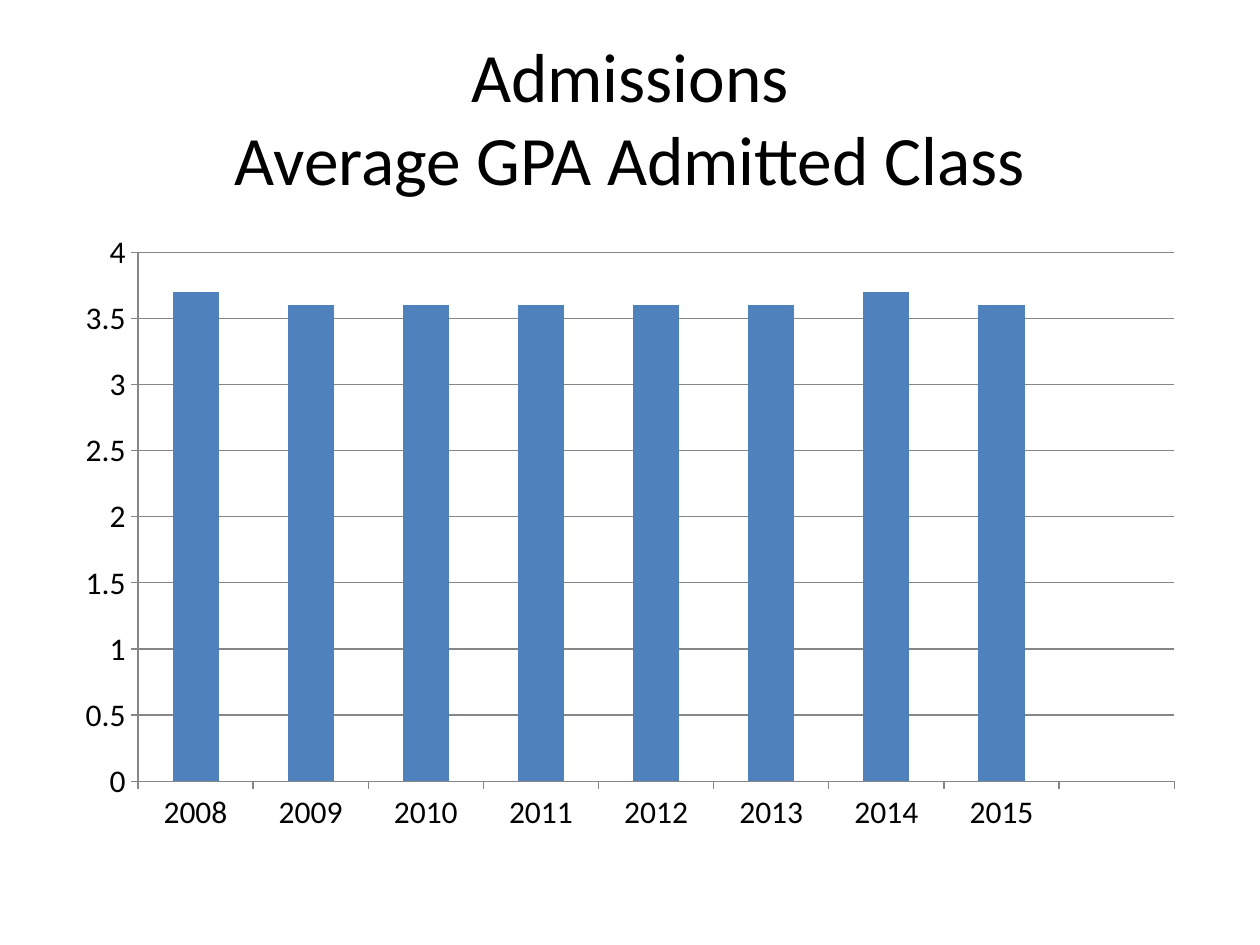
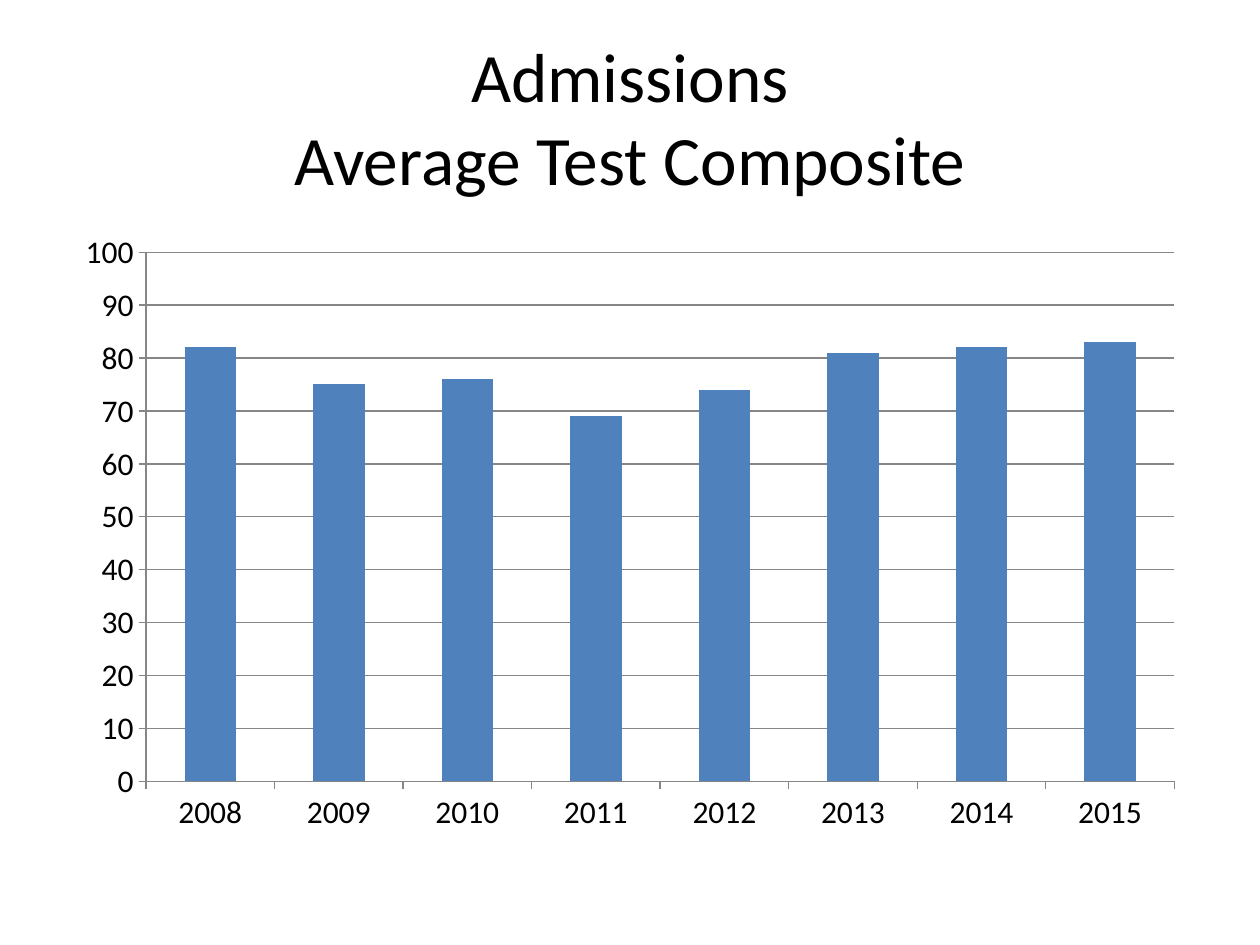
from dataclasses import dataclass

from pptx import Presentation
from pptx import util as u
from pptx.chart import data as cd
from pptx.dml.color import RGBColor
from pptx.enum import chart as ce, text as te


@dataclass(frozen=True)
class Theme:
    font: str = "Calibri"
    ink: str = "000000"
    bar: str = "4F81BD"
    rule: str = "868686"
    paper: str = "FFFFFF"
    head: float = 39.6
    label: float = 18


THEME = Theme()
# Boxes: left, top, width, height in cm
HEAD = (1.27, 0.76, 22.86, 3.18)
PLOT = (1.27, 4.45, 22.86, 12.57)
YEARS = [str(year) for year in range(2008, 2016)]


def rgb(code):
    return RGBColor.from_string(code)


def place(box):
    return [u.Cm(side) for side in box]


def style(font, size, color):
    font.name = THEME.font
    font.size = u.Pt(size)
    font.color.rgb = rgb(color)


def write(slide, words, box, *, size, color=THEME.ink, align=te.PP_ALIGN.CENTER):
    frame = slide.shapes.add_textbox(*place(box)).text_frame
    frame.word_wrap = True
    frame.vertical_anchor = te.MSO_ANCHOR.MIDDLE
    para = frame.paragraphs[0]
    para.text = words
    para.alignment = align
    for run in para.runs:
        style(run.font, size, color)


def rule(line):
    line.color.rgb = rgb(THEME.rule)
    line.width = u.Pt(0.75)


def columns(slide, box, names, values, top, step):
    data = cd.CategoryChartData()
    data.categories = names
    data.add_series("Series 1", values)
    kind = ce.XL_CHART_TYPE.COLUMN_CLUSTERED
    chart = slide.shapes.add_chart(kind, *place(box), data).chart
    chart.has_legend = chart.has_title = False
    style(chart.font, THEME.label, THEME.ink)

    # Bars
    plot = chart.plots[0]
    plot.gap_width = 150
    plot.vary_by_categories = False
    fill = plot.series[0].format.fill
    fill.solid()
    fill.fore_color.rgb = rgb(THEME.bar)

    # Axes and grid
    for axis in (chart.category_axis, chart.value_axis):
        axis.major_tick_mark = ce.XL_TICK_MARK.OUTSIDE
        axis.minor_tick_mark = ce.XL_TICK_MARK.NONE
        rule(axis.format.line)
    scale = chart.value_axis
    scale.minimum_scale, scale.maximum_scale = 0, top
    scale.major_unit = step
    scale.has_major_gridlines = True
    rule(scale.major_gridlines.format.line)
    scale.tick_labels.number_format = "General"
    scale.tick_labels.number_format_is_linked = False


def page(deck, topic, names, values, top, step):
    slide = deck.slides.add_slide(deck.slide_layouts[6])
    back = slide.background.fill
    back.solid()
    back.fore_color.rgb = rgb(THEME.paper)
    write(slide, f"Admissions\n{topic}", HEAD, size=THEME.head)
    columns(slide, PLOT, names, values, top, step)


def main():
    deck = Presentation()
    deck.slide_width, deck.slide_height = u.Cm(25.4), u.Cm(19.05)
    # The grade chart keeps one empty place after the last year
    grades = [3.7, 3.6, 3.6, 3.6, 3.6, 3.6, 3.7, 3.6, None]
    page(deck, "Average GPA Admitted Class", YEARS + [""], grades, 4, 0.5)
    scores = [82, 75, 76, 69, 74, 81, 82, 83]
    page(deck, "Average Test Composite", YEARS, scores, 100, 10)
    deck.save("out.pptx")


if __name__ == "__main__":
    main()
